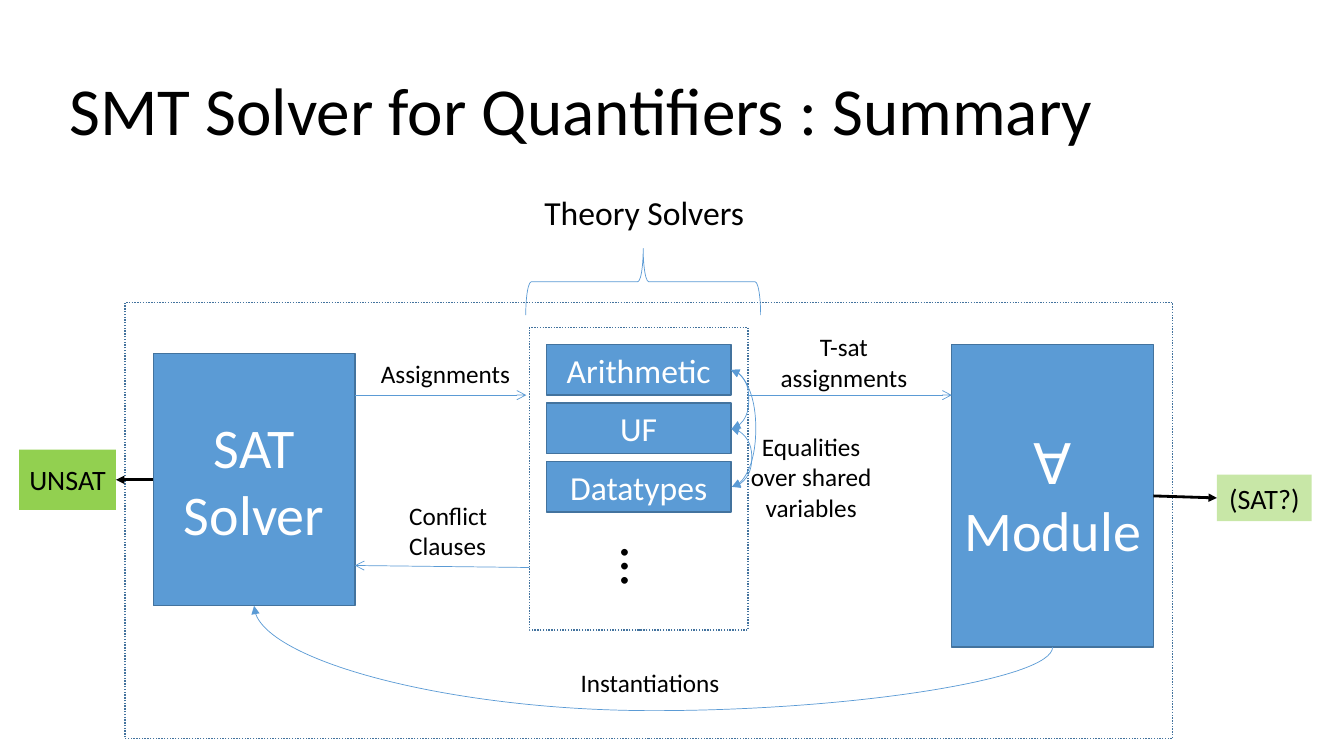
from dataclasses import dataclass

from lxml import etree
from pptx import Presentation
from pptx.dml.color import RGBColor
from pptx.enum.dml import MSO_LINE
from pptx.enum.shapes import MSO_CONNECTOR, MSO_SHAPE
from pptx.enum.text import MSO_ANCHOR, MSO_AUTO_SIZE, PP_ALIGN
from pptx.oxml.ns import qn
from pptx.util import Inches, Pt

RECT, BRACE = MSO_SHAPE.RECTANGLE, MSO_SHAPE.RIGHT_BRACE
STRAIGHT, CURVE = MSO_CONNECTOR.STRAIGHT, MSO_CONNECTOR.CURVE
DOTTED = MSO_LINE.ROUND_DOT
LEFT, CENTER = PP_ALIGN.LEFT, PP_ALIGN.CENTER
TOP, MIDDLE = MSO_ANCHOR.TOP, MSO_ANCHOR.MIDDLE
GROW = MSO_AUTO_SIZE.SHAPE_TO_FIT_TEXT
SIDE_LEFT, SIDE_RIGHT = 1, 3


@dataclass(frozen=True)
class Theme:
    font: str = "Calibri"
    black: str = "000000"
    white: str = "FFFFFF"
    blue: str = "5B9BD5"
    edge: str = "43739E"
    green: str = "92D050"
    title: int = 48
    module: int = 40
    theory: int = 24
    result: int = 20
    label: int = 18
    thin: float = 0.5
    border: float = 1
    thick: float = 2


T = Theme()


def rgb(value):
    return RGBColor.from_string(value)


def write(tf, text, size, color=T.black, align=CENTER, anchor=MIDDLE, spacing=None):
    """Fill a text frame, one paragraph per line of text."""
    tf.vertical_anchor = anchor
    for i, line in enumerate(text.split("\n")):
        p = tf.add_paragraph() if i else tf.paragraphs[0]
        p.alignment = align
        if spacing:
            p.line_spacing = spacing
        r = p.add_run()
        r.text = line
        r.font.name, r.font.size = T.font, Pt(size)
        r.font.color.rgb = rgb(color)


def label(s, box, text, size=T.label, align=LEFT, wrap=False, rotation=0):
    tb = s.shapes.add_textbox(*map(Inches, box))
    tb.rotation = rotation
    tf = tb.text_frame
    tf.word_wrap, tf.auto_size = wrap, GROW
    write(tf, text, size, align=align, anchor=TOP)


def shape(s, box, kind=RECT, fill=None, line=None, width=T.border, dash=None):
    sp = s.shapes.add_shape(kind, *map(Inches, box))
    sp.shadow.inherit = False
    if fill:
        sp.fill.solid()
        sp.fill.fore_color.rgb = rgb(fill)
    else:
        sp.fill.background()
    if line:
        sp.line.color.rgb, sp.line.width = rgb(line), Pt(width)
        if dash:
            sp.line.dash_style = dash
    else:
        sp.line.fill.background()
    return sp


def block(s, box, text, size):
    sp = shape(s, box, fill=T.blue, line=T.edge)
    write(sp.text_frame, text, size, color=T.white)
    return sp


def connector(s, start, end, kind=STRAIGHT, color=T.blue, width=T.thin,
              head=None, tail=None):
    c = s.shapes.add_connector(kind, *map(Inches, (*start, *end)))
    c.line.color.rgb, c.line.width = rgb(color), Pt(width)
    ln = c.line._get_or_add_ln()
    for tag, tip in (("a:headEnd", head), ("a:tailEnd", tail)):
        if tip:
            etree.SubElement(ln, qn(tag), type=tip)
    etree.SubElement(c._element.spPr, qn("a:effectLst"))
    return c


def curve(s, start, end, bulge, upright=False, **fmt):
    """Curve whose middle lies bulge from start: to the right, or down if upright."""
    (x0, y0), (x1, y1) = start, end
    run = x1 - x0
    if upright:
        # A quarter turn about the centre brings these points to start and end
        cx, cy, dx, dy = (x0 + x1) / 2, (y0 + y1) / 2, (x0 - x1) / 2, (y0 - y1) / 2
        start, end, run = (cx + dy, cy - dx), (cx - dy, cy + dx), y1 - y0
    c = connector(s, start, end, CURVE, **fmt)
    spPr = c._element.spPr
    if upright:
        spPr.find(qn("a:xfrm")).set("rot", "5400000")
    guides = spPr.find(qn("a:prstGeom")).find(qn("a:avLst"))
    etree.SubElement(guides, qn("a:gd"), name="adj1",
                     fmla=f"val {round(bulge / run * 100000)}")


def title(s, box, text):
    tf = s.shapes.add_textbox(*map(Inches, box)).text_frame
    tf.word_wrap = True
    write(tf, text, T.title, align=LEFT, spacing=0.9)


def theory_panel(s, box):
    x, y, w, h = box
    shape(s, box, line=T.edge, dash=DOTTED)

    # Stacked solvers
    row_x, row_y, row_w, row_h, pitch = x + 0.17, y + 0.17, 1.83, 0.5, 0.58
    for i, name in enumerate(("Arithmetic", "UF", "Datatypes")):
        block(s, (row_x, row_y + i * pitch, row_w, row_h), name, T.theory)
    label(s, (x + 0.84, y + 1.99, 0.59, 0.77), "…", T.module, rotation=90)

    # Brace and heading above the panel
    brace = shape(s, (x + 0.8, y - 1.62, 0.66, 2.33), BRACE, line=T.blue, width=T.thin)
    brace.rotation = 90
    brace._element.spPr.find(qn("a:xfrm")).set("flipH", "1")
    label(s, (x - 0.36, y - 1.4, 3, 0.5), "Theory Solvers", T.theory, CENTER, wrap=True)

    # Equalities exchanged between each pair of solvers
    side, mid = row_x + row_w, row_y + row_h / 2
    for a, b, bulge in ((0, 2, 0.25), (0, 1, 0.18), (1, 2, 0.21)):
        curve(s, (side, mid + a * pitch), (side + 0.01, mid + b * pitch), bulge,
              head="triangle", tail="triangle")
    label(s, (x + w - 0.1, y + 0.98, 1.45, 1.01),
          "Equalities\nover shared\nvariables", align=CENTER)


def result(s, box, text, source, source_side, own_side, alpha=None):
    """Result box with an arrow from the module that reports it."""
    sp = shape(s, box, fill=T.green)
    if alpha:
        clr = sp._element.spPr.find(qn("a:solidFill"))[0]
        etree.SubElement(clr, qn("a:alpha"), val=str(alpha * 1000))
    # Narrow insets keep the word on one line
    sp.text_frame.word_wrap = False
    write(sp.text_frame, text, T.result)
    c = connector(s, (0, 0), (1, 1), color=T.black, width=T.thick, tail="triangle")
    c.begin_connect(source, source_side)
    c.end_connect(sp, own_side)


def solver_diagram(s, box):
    x, y, w, h = box
    sat_x, sat_y, sat_w, sat_h = x + 0.28, y + 0.51, 2, 2.5
    mod_x, mod_y, mod_w, mod_h = x + 8.2, y + 0.42, 2, 3
    panel_x, panel_w = x + 4.01, 2.17
    sat_right = sat_x + sat_w

    # Main modules
    module = block(s, (mod_x, mod_y, mod_w, mod_h), "∀ Module", T.module)
    sat = block(s, (sat_x, sat_y, sat_w, sat_h), "SAT Solver", T.module)
    theory_panel(s, (panel_x, y + 0.25, panel_w, 3))
    shape(s, box, line=T.edge, dash=DOTTED)

    # Flow between modules
    flow_y = y + 0.92
    connector(s, (sat_right, flow_y), (panel_x - 0.03, flow_y), tail="arrow")
    connector(s, (panel_x + panel_w, flow_y), (mod_x, flow_y), tail="arrow")
    connector(s, (sat_right, y + 2.61), (panel_x, y + 2.63), head="arrow")
    curve(s, (mod_x + mod_w / 2, mod_y + mod_h), (sat_x + sat_w / 2, sat_y + sat_h),
          0.63, upright=True, tail="triangle")

    # Flow labels
    label(s, (x + 2.44, y + 0.51, 1.5, 0.4), "Assignments")
    label(s, (x + 2.72, y + 1.91, 0.99, 0.71), "Conflict\nClauses")
    label(s, (x + 6.38, y + 0.24, 1.5, 0.71), "T-sat\nassignments", align=CENTER)
    label(s, (x + 4.42, y + 3.57, 1.59, 0.4), "Instantiations")

    # Results outside the frame
    result(s, (x - 1.05, y + 1.46, 0.96, 0.6), "UNSAT", sat, SIDE_LEFT, SIDE_RIGHT)
    result(s, (x + w + 0.44, y + 1.71, 0.94, 0.46), "(SAT?)", module,
           SIDE_RIGHT, SIDE_LEFT, alpha=50)


def main():
    prs = Presentation()
    prs.slide_width, prs.slide_height = Inches(13.33), Inches(7.5)
    s = prs.slides.add_slide(prs.slide_layouts[6])
    title(s, (0.59, 0.4, 12.17, 1.45), "SMT Solver for Quantifiers : Summary")
    solver_diagram(s, (1.24, 3, 10.39, 4.33))
    prs.save("out.pptx")


if __name__ == "__main__":
    main()
